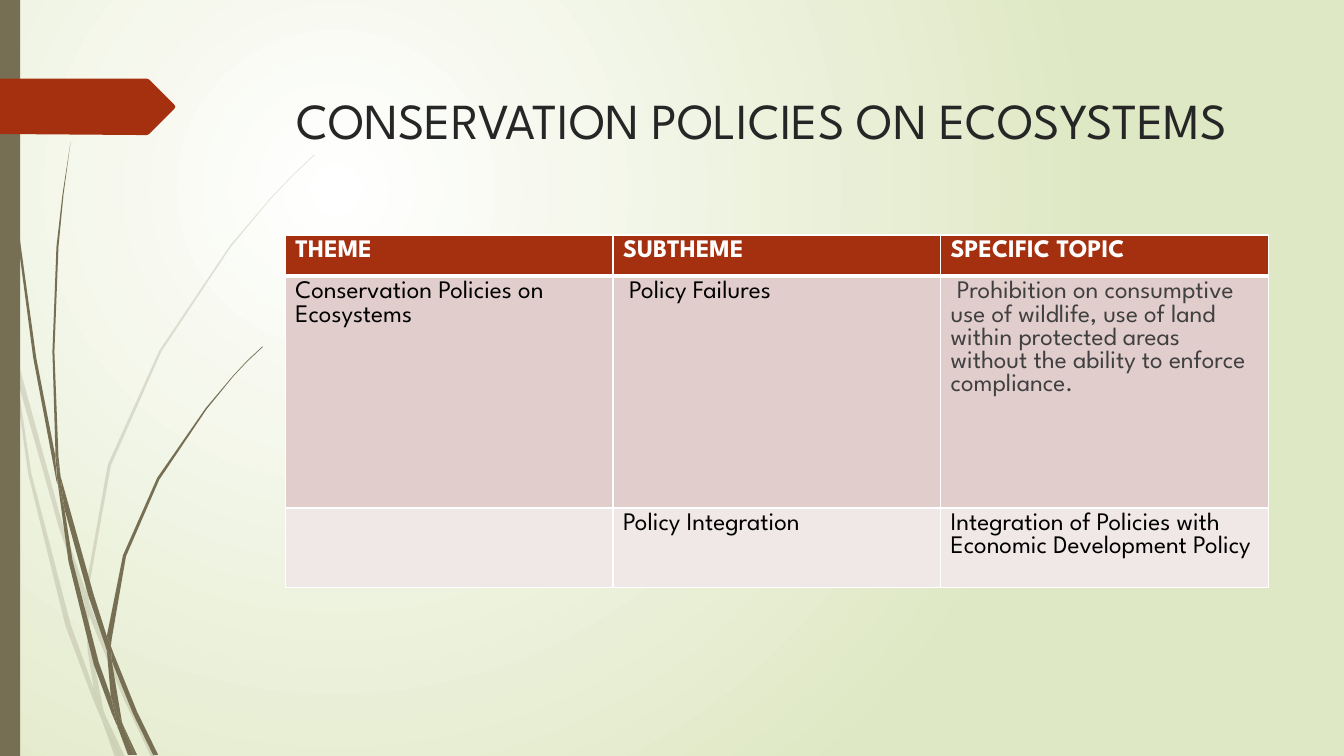
from lxml import etree
from pptx import Presentation
from pptx.dml.color import RGBColor
from pptx.enum.shapes import MSO_SHAPE
from pptx.enum.text import MSO_ANCHOR, PP_ALIGN
from pptx.oxml.ns import qn
from pptx.util import Pt

RECTANGLE = MSO_SHAPE.RECTANGLE
TOP = MSO_ANCHOR.TOP
LEFT = PP_ALIGN.LEFT

FONT = "League Spartan"
COLORS = {
    "white": "FFFFFF", "meadow": "DFE8C4", "grass": "766F54", "rust": "A53010",
    "title": "262626", "black": "000000", "gray": "404040",
    "band_dark": "E1CDCC", "band_light": "F0E8E7",
}

TITLE = "CONSERVATION POLICIES ON ECOSYSTEMS"
ROWS = [
    ("THEME", "SUBTHEME", "SPECIFIC TOPIC"),
    ("Conservation Policies on Ecosystems", " Policy Failures",
     " Prohibition on consumptive use of wildlife, use of land within protected areas "
     "without the ability to enforce compliance."),
    ("", "Policy Integration", "Integration of Policies with Economic Development Policy"),
]
ROW_HEIGHTS = (29.5, 165.6, 57)
ROW_FILLS = ("rust", "band_dark", "band_light")
COLUMN_WIDTH = 234
TABLE_LEFT, TABLE_TOP = 203.8, 167.8
SLIDE_WIDTH, SLIDE_HEIGHT = 960, 540

OUTLINE_UNIT = 0.72
PALE_BLADES = [
    [(11, 350), (9, 322), (0, 282), (0, 299), (10, 344)],
    [(58, 522), (84, 599), (85, 586), (62, 520), (14, 345), (17, 376)],
    [(92, 607), (88, 596), (88, 610), (123, 694), (150, 751), (155, 751), (127, 692)],
    [(119, 751), (124, 751), (105, 711)],
    [(93, 683), (70, 619), (31, 469), (17, 376), (11, 350), (28, 470), (65, 621),
     (92, 693), (101, 714), (99, 707)],
    [(84, 599), (87, 646), (93, 683), (96, 692), (105, 711), (103, 706), (91, 646),
     (88, 610), (88, 608)],
    [(88, 584), (110, 462), (160, 349), (229, 245), (268, 198), (290, 175), (312, 154),
     (312, 153), (289, 175), (268, 197), (228, 244), (158, 348), (107, 461), (85, 584),
     (85, 586), (88, 596)],
    [(101, 714), (114, 751), (119, 751)],
    [(88, 608), (88, 610), (88, 596), (85, 586), (84, 599)],
    [(96, 692), (93, 683), (99, 707), (101, 714), (119, 751), (105, 711)],
]
DARK_BLADES = [
    [(7, 110), (17, 233), (33, 355), (56, 477), (57, 481), (55, 457), (55, 453), (36, 355),
     (19, 232), (8, 109), (5, 48), (4, 0), (3, 0), (4, 48)],
    [(88, 592), (106, 645), (106, 633), (106, 631), (93, 590), (60, 472), (64, 505)],
    [(113, 649), (110, 641), (111, 656), (132, 708), (152, 749), (157, 749), (136, 706)],
    [(110, 691), (98, 657), (72, 556), (64, 505), (57, 477), (68, 557), (93, 659),
     (111, 708), (117, 722), (116, 717)],
    [(60, 472), (58, 453), (54, 349), (58, 245), (63, 193), (70, 141), (62, 193),
     (56, 245), (52, 349), (55, 449)],
    [(133, 749), (136, 749), (122, 719)],
    [(57, 477), (64, 505), (60, 472), (55, 449), (55, 453)],
    [(111, 633), (125, 552), (158, 476), (205, 406), (231, 374), (245, 359), (261, 344),
     (260, 344), (245, 358), (231, 373), (204, 405), (156, 474), (122, 551), (106, 631),
     (110, 641)],
    [(117, 722), (127, 749), (131, 749)],
    [(106, 645), (110, 691), (116, 706), (122, 719), (121, 716), (111, 656), (109, 651)],
    [(106, 645), (109, 651), (111, 656), (110, 641), (106, 631), (106, 633)],
    [(116, 706), (110, 691), (116, 717), (117, 722), (130, 749), (133, 749), (122, 719)],
]
TAG = [(173, 108), (148, 133), (146, 134), (136, 134), (0, 133), (0, 78), (136, 78),
       (146, 78), (148, 79), (173, 104), (174, 106)]


def rgb(name):
    return RGBColor.from_string(COLORS[name])


def paint(shape, color, opacity=100):
    shape.shadow.inherit = False
    shape.fill.solid()
    shape.fill.fore_color.rgb = rgb(color)
    shape.line.fill.background()
    if opacity < 100:
        tint = shape._element.spPr.find(".//" + qn("a:srgbClr"))
        etree.SubElement(tint, qn("a:alpha"), val=str(opacity * 1000))


def add_outline(shapes, points, color, opacity=100):
    builder = shapes.build_freeform(*points[0], scale=Pt(OUTLINE_UNIT))
    builder.add_line_segments(points[1:], close=True)
    paint(builder.convert_to_shape(), color, opacity)


def add_background(slide):
    fill = slide.background.fill
    fill.gradient()
    for stop, color in zip(fill.gradient_stops, ("white", "meadow")):
        stop.color.rgb = rgb(color)
    gradient = slide.element.find(".//" + qn("a:gradFill"))
    gradient.remove(gradient.find(qn("a:lin")))
    circle = etree.SubElement(gradient, qn("a:path"), path="circle")
    etree.SubElement(circle, qn("a:fillToRect"), l="50000", t="50000", r="100000", b="100000")


def write(paragraph, text, size, color, bold=False):
    run = paragraph.add_run()
    run.text = text
    run.font.name = FONT
    run.font.size = Pt(size)
    run.font.bold = bold
    run.font.color.rgb = rgb(color)


def add_borders(cell, widths):
    properties = cell._tc.get_or_add_tcPr()
    for side, width in widths.items():
        line = etree.SubElement(properties, qn("a:ln" + side), w=str(Pt(width)))
        solid = etree.SubElement(line, qn("a:solidFill"))
        etree.SubElement(solid, qn("a:srgbClr"), val=COLORS["white"])


def add_policy_table(slide):
    columns = len(ROWS[0])
    table = slide.shapes.add_table(
        len(ROWS), columns, Pt(TABLE_LEFT), Pt(TABLE_TOP),
        Pt(COLUMN_WIDTH * columns), Pt(sum(ROW_HEIGHTS))).table
    for column in table.columns:
        column.width = Pt(COLUMN_WIDTH)
    for i, texts in enumerate(ROWS):
        table.rows[i].height = Pt(ROW_HEIGHTS[i])
        borders = {"L": 1, "R": 1, "T": 3 if i == 1 else 1, "B": 3 if i == 0 else 1}
        for j, text in enumerate(texts):
            cell = table.cell(i, j)
            add_borders(cell, borders)
            cell.fill.solid()
            cell.fill.fore_color.rgb = rgb(ROW_FILLS[i])
            paragraph = cell.text_frame.paragraphs[0]
            is_prohibition = (i, j) == (1, 2)
            if is_prohibition:
                paragraph.space_before = Pt(10)
            if text:
                color = "white" if i == 0 else "gray" if is_prohibition else "black"
                write(paragraph, text, 18, color, bold=i == 0)


def add_title(slide):
    title = slide.shapes.title
    title.left, title.top, title.width, title.height = Pt(204.5), Pt(49), Pt(702), Pt(100.8)
    frame = title.text_frame
    frame.word_wrap = True
    frame.vertical_anchor = TOP
    frame.margin_top = Pt(14.6)
    paragraph = frame.paragraphs[0]
    paragraph.alignment = LEFT
    write(paragraph, TITLE, 36, "title")


def main():
    presentation = Presentation()
    presentation.slide_width = Pt(SLIDE_WIDTH)
    presentation.slide_height = Pt(SLIDE_HEIGHT)
    slide = presentation.slides.add_slide(presentation.slide_layouts[5])
    add_background(slide)
    for blades, opacity in ((PALE_BLADES, 20), (DARK_BLADES, 100)):
        group = slide.shapes.add_group_shape()
        for blade in blades:
            add_outline(group.shapes, blade, "grass", opacity)
    side_bar = slide.shapes.add_shape(RECTANGLE, 0, 0, Pt(14.4), Pt(SLIDE_HEIGHT))
    paint(side_bar, "grass")
    add_outline(slide.shapes, TAG, "rust")
    add_title(slide)
    add_policy_table(slide)
    presentation.save("out.pptx")


if __name__ == "__main__":
    main()
